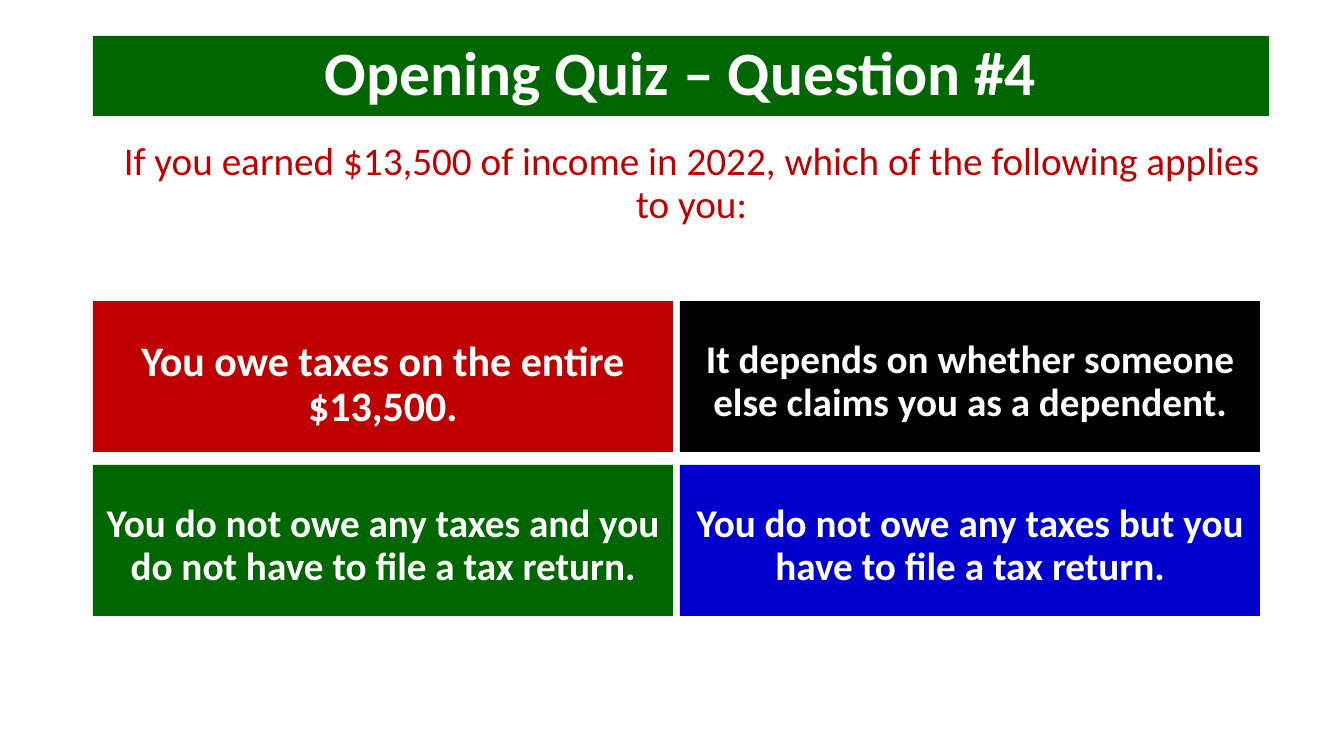
from pptx import Presentation
from pptx.dml.color import RGBColor
from pptx.enum.shapes import MSO_SHAPE
from pptx.enum.text import MSO_ANCHOR, MSO_AUTO_SIZE, PP_ALIGN
from pptx.util import Emu, Pt

RECTANGLE = MSO_SHAPE.RECTANGLE
TOP, MIDDLE = MSO_ANCHOR.TOP, MSO_ANCHOR.MIDDLE
CENTER = PP_ALIGN.CENTER
NO_AUTOFIT = MSO_AUTO_SIZE.NONE
TITLE_ONLY = 5
EMU_PER_PX = 914400 / 100.8

WHITE, BLACK = "FFFFFF", "000000"
RED, GREEN, BLUE = "C00000", "006600", "0000CC"


def px(length):
    return Emu(round(length * EMU_PER_PX))


def color(value):
    return RGBColor.from_string(value)


def write(shape, text, size=28, ink=WHITE, bold=True, anchor=TOP, side=10, top=5):
    frame = shape.text_frame
    frame.word_wrap = True
    frame.auto_size = NO_AUTOFIT
    frame.vertical_anchor = anchor
    frame.margin_left = frame.margin_right = px(side)
    frame.margin_top, frame.margin_bottom = px(top), px(5)
    para = frame.paragraphs[0]
    para.alignment = CENTER
    para.line_spacing = 0.9
    para.space_before = Pt(0)
    span = para.add_run()
    span.text = text
    span.font.name = "Calibri"
    span.font.size = Pt(size)
    span.font.bold = bold
    span.font.color.rgb = color(ink)


class QuizPage:
    def __init__(self, deck):
        self.page = deck.slides.add_slide(deck.slide_layouts[TITLE_ONLY])

    def fill(self, shape, value):
        shape.fill.solid()
        shape.fill.fore_color.rgb = color(value)

    def title(self, text, left, top, width, height):
        title = self.page.shapes.title
        title.left, title.top = px(left), px(top)
        title.width, title.height = px(width), px(height)
        self.fill(title, GREEN)
        write(title, text, size=44, anchor=MIDDLE)

    def question(self, text, left, top, width, height):
        box = self.page.shapes.add_textbox(px(left), px(top), px(width), px(height))
        write(box, text, ink=RED, bold=False, side=15)

    def answer(self, text, left, top, width, height, background, size):
        box = self.page.shapes.add_shape(
            RECTANGLE, px(left), px(top), px(width), px(height))
        box.shadow.inherit = False
        box.line.fill.background()
        self.fill(box, background)
        write(box, text, size=size, top=39)


def main():
    deck = Presentation()
    deck.slide_width, deck.slide_height = px(1344), px(756)
    quiz = QuizPage(deck)
    quiz.title("Opening Quiz – Question #4", 93, 36, 1176, 80)
    quiz.question(
        "If you earned $13,500 of income in 2022, which of the following applies to you:",
        93, 137, 1197, 100)
    answers = [
        ("You owe taxes on the entire $13,500.", RED, 30),
        ("It depends on whether someone else claims you as a dependent.", BLACK, 28),
        ("You do not owe any taxes and you do not have to file a tax return.", GREEN, 28),
        ("You do not owe any taxes but you have to file a tax return.", BLUE, 28),
    ]
    for index, (text, background, size) in enumerate(answers):
        row, column = divmod(index, 2)
        quiz.answer(text, 93 + 587 * column, 301 + 164 * row, 580, 151, background, size)
    deck.save("out.pptx")


if __name__ == "__main__":
    main()
